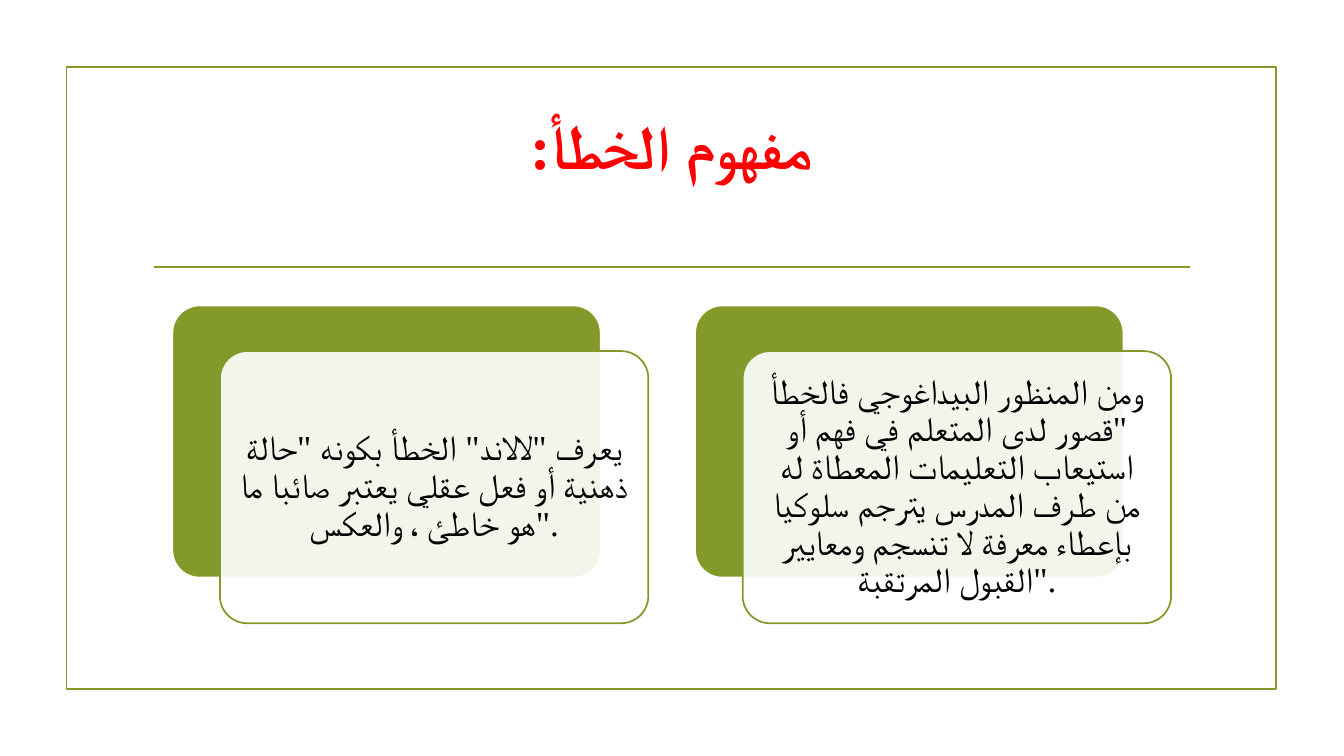
from dataclasses import dataclass

import pptx
import pptx.dml.color
import pptx.enum.shapes
import pptx.enum.text
import pptx.oxml
import pptx.oxml.ns
import pptx.util
from pptx.util import Pt

FONT = "Times New Roman"
GREEN, WHITE, BLACK, RED = "83992A", "FFFFFF", "000000", "FF0000"
LINE_WIDTH = Pt(1.25)
CARD_LEFT, CARD_TOP, CARD_PITCH = 123.1, 218.2, 373.4
CARD_WIDTH, CARD_HEIGHT = 306, 194.4
FRONT_SHIFT_X, FRONT_SHIFT_Y = 34, 32.6
A_NAMESPACE = pptx.oxml.ns.nsdecls("a")


@dataclass
class Panel:
    """One rounded rectangle of a card, in points."""
    left: float
    top: float
    fill: str
    line: str
    opacity: int = 100
    text: str = ""


def rgb(value: str) -> pptx.dml.color.RGBColor:
    return pptx.dml.color.RGBColor.from_string(value)


def format_text(frame, size: float, colour: str, bold: bool = False) -> None:
    """Centre the text and format it for Latin and Arabic script alike."""
    frame.word_wrap = True
    frame.auto_size = pptx.enum.text.MSO_AUTO_SIZE.NONE
    frame.vertical_anchor = pptx.enum.text.MSO_ANCHOR.MIDDLE
    for para in frame.paragraphs:
        para.alignment = pptx.enum.text.PP_ALIGN.CENTER
        for span in para.runs:
            span.font.size = Pt(size)
            span.font.bold = bold
            span.font.color.rgb = rgb(colour)
            span.font.name = FONT
            span.font._element.append(pptx.oxml.parse_xml(
                f'<a:cs {A_NAMESPACE} typeface="{FONT}"/>'))


def draw_frame(page) -> None:
    frame = page.shapes.add_shape(
        pptx.enum.shapes.MSO_SHAPE.RECTANGLE, Pt(47.6), Pt(48), Pt(864), Pt(444))
    frame.shadow.inherit = False
    frame.fill.background()
    frame.line.color.rgb = rgb(GREEN)
    frame.line.width = LINE_WIDTH


def draw_divider(page) -> None:
    divider = page.shapes.add_connector(
        pptx.enum.shapes.MSO_CONNECTOR.STRAIGHT,
        Pt(110.2), Pt(190.8), Pt(850.3), Pt(190.8))
    divider.line.color.rgb = rgb(GREEN)
    divider.line.width = LINE_WIDTH
    divider._element.spPr.append(pptx.oxml.parse_xml(f"<a:effectLst {A_NAMESPACE}/>"))


def write_title(page, text: str) -> None:
    title = page.shapes.title
    title.left, title.top, title.width, title.height = Pt(102), Pt(77), Pt(756), Pt(103)
    title.text_frame.text = text
    title.text_frame.margin_bottom = Pt(54)
    format_text(title.text_frame, 44, RED, bold=True)
    title.text_frame.paragraphs[0]._p.get_or_add_pPr().set("rtl", "1")


def draw_panel(page, panel: Panel) -> None:
    box = page.shapes.add_shape(
        pptx.enum.shapes.MSO_SHAPE.ROUNDED_RECTANGLE,
        Pt(panel.left), Pt(panel.top), Pt(CARD_WIDTH), Pt(CARD_HEIGHT))
    box.adjustments[0] = 0.1
    box.shadow.inherit = False
    box.fill.solid()
    box.fill.fore_color.rgb = rgb(panel.fill)
    if panel.opacity < 100:
        colour = box._element.spPr.find(".//" + pptx.oxml.ns.qn("a:srgbClr"))
        colour.append(pptx.oxml.parse_xml(
            f'<a:alpha {A_NAMESPACE} val="{panel.opacity * 1000}"/>'))
    box.line.color.rgb = rgb(panel.line)
    box.line.width = LINE_WIDTH
    if panel.text:
        frame = box.text_frame
        frame.text = panel.text
        frame.margin_left = frame.margin_right = Pt(7.2)
        frame.margin_top = frame.margin_bottom = Pt(7.2)
        format_text(frame, 25, BLACK)
        frame.paragraphs[0].line_spacing = 0.9


def main() -> None:
    deck = pptx.Presentation()
    deck.slide_width, deck.slide_height = Pt(960), Pt(540)
    page = deck.slides.add_slide(deck.slide_layouts.get_by_name("Title Only"))
    draw_frame(page)
    draw_divider(page)
    write_title(page, "مفهوم الخطأ:")
    definitions = [
        'يعرف "لالاند" الخطأ بكونه "حالة ذهنية أو فعل عقلي يعتبر صائبا ما '
        'هو خاطئ ، والعكس".',
        'ومن المنظور البيداغوجي فالخطأ "قصور لدى المتعلم في فهم أو استيعاب '
        'التعليمات المعطاة له من طرف المدرس يترجم سلوكيا بإعطاء معرفة لا '
        'تنسجم ومعايير القبول المرتقبة".',
    ]
    for index, definition in enumerate(definitions):
        left = CARD_LEFT + index * CARD_PITCH
        draw_panel(page, Panel(left, CARD_TOP, GREEN, WHITE))
        draw_panel(page, Panel(left + FRONT_SHIFT_X, CARD_TOP + FRONT_SHIFT_Y,
                               WHITE, GREEN, opacity=90, text=definition))
    deck.save("out.pptx")


if __name__ == "__main__":
    main()
